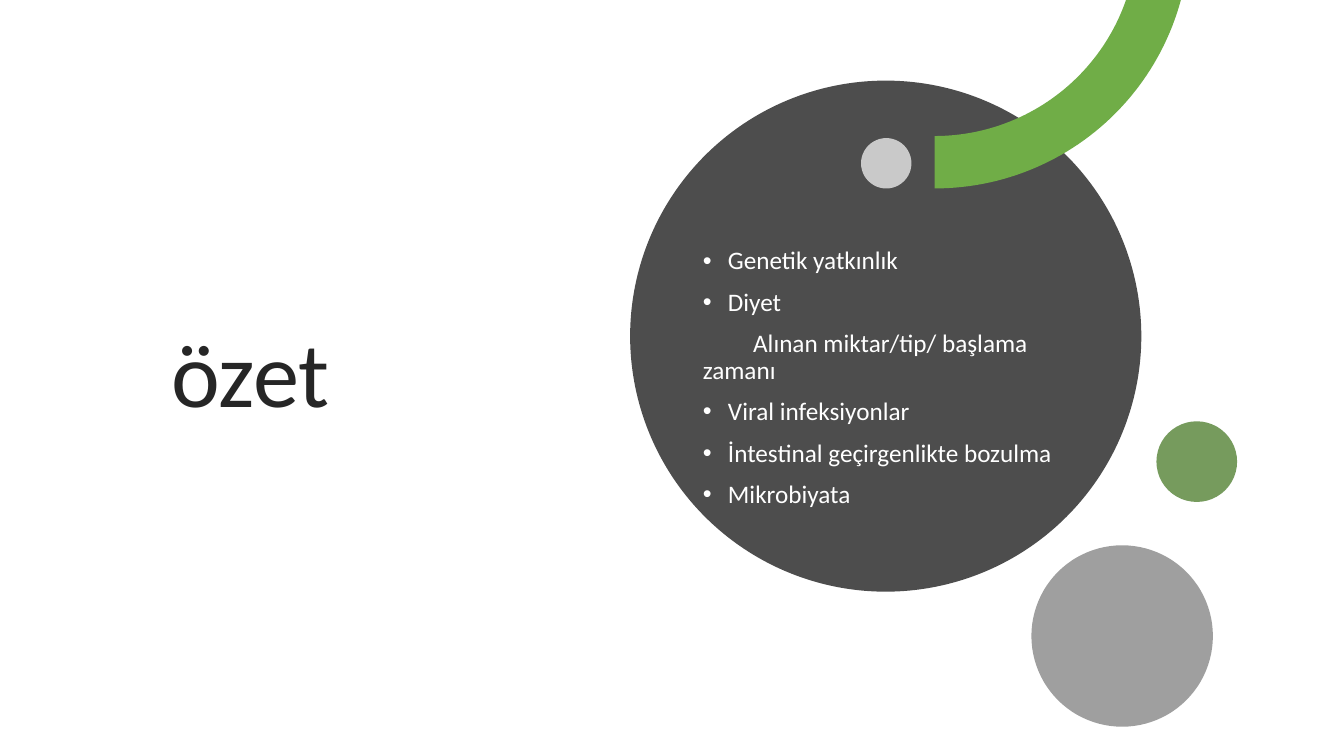
import math

from lxml import etree
from pptx import Presentation
from pptx.dml.color import RGBColor
from pptx.enum.shapes import MSO_SHAPE
from pptx.enum.text import MSO_ANCHOR, MSO_AUTO_SIZE, PP_ALIGN
from pptx.oxml.ns import qn
from pptx.util import Pt

OVAL = MSO_SHAPE.OVAL
MIDDLE = MSO_ANCHOR.MIDDLE
LEFT = PP_ALIGN.LEFT
NO_AUTOFIT = MSO_AUTO_SIZE.NONE

PX = 9144  # EMU, 100 px to the inch
SLIDE_SIZE = (1333, 750)
FONT = "Calibri"
COLORS = {
    "title": "262626",
    "body": "FFFFFF",
    "disc": "4D4D4D",
    "light": "FFFFFF",
    "arc": "70AD47",
    "green": "548235",
    "gray": "404040",
}

TITLE = "özet"
TITLE_BOX = (160, 119, 416, 511)
BODY_BOX = (687, 193, 392, 365)
# text, bulleted
BODY = [
    ("Genetik yatkınlık", True),
    ("Diyet", True),
    ("\tAlınan miktar/tip/ başlama zamanı", False),
    ("Viral infeksiyonlar", True),
    ("İntestinal geçirgenlikte bozulma", True),
    ("Mikrobiyata", True),
]
# left, top, diameter, color, opacity in percent
DISC = (625, 80, 507, "disc", 100)
HIGHLIGHT = (854, 137, 50, "light", 70)
CORNER_CIRCLES = [(1147, 418, 80, "green", 80), (1023, 541, 180, "gray", 50)]
ARC_CENTER = (927, -66)
ARC_RADII = (253, 201)
ARC_STEPS = 48
BULLET_INDENT = 25


def paint(shape, color, opacity=100):
    shape.shadow.inherit = False
    shape.fill.solid()
    shape.fill.fore_color.rgb = RGBColor.from_string(COLORS[color])
    shape.line.fill.background()
    if opacity < 100:
        color_element = shape._element.spPr.find(qn("a:solidFill"))[0]
        etree.SubElement(color_element, qn("a:alpha"), val=str(opacity * 1000))


def add_circle(slide, left, top, diameter, color, opacity):
    box = (left, top, diameter, diameter)
    circle = slide.shapes.add_shape(OVAL, *(value * PX for value in box))
    paint(circle, color, opacity)


def arc_points(radius):
    """Points from where the circle crosses the slide's top edge to its lowest point."""
    center_x, center_y = ARC_CENTER
    start = math.asin(-center_y / radius)
    step = (math.pi / 2 - start) / ARC_STEPS
    angles = [start + step * index for index in range(ARC_STEPS + 1)]
    return [
        (round((center_x + radius * math.cos(angle)) * PX),
         round((center_y + radius * math.sin(angle)) * PX))
        for angle in angles
    ]


def add_arc(slide):
    outer, inner = (arc_points(radius) for radius in ARC_RADII)
    points = outer + inner[::-1]
    builder = slide.shapes.build_freeform(*points[0])
    builder.add_line_segments(points[1:], close=True)
    paint(builder.convert_to_shape(), "arc")


def place(placeholder, box):
    placeholder.left, placeholder.top, placeholder.width, placeholder.height = (
        value * PX for value in box)
    frame = placeholder.text_frame
    frame.word_wrap = True
    frame.auto_size = NO_AUTOFIT
    frame.vertical_anchor = MIDDLE
    return frame


def write(paragraph, text, *, size, color, bullet=False, space_before=0):
    properties = paragraph._p.get_or_add_pPr()
    indent = BULLET_INDENT * PX if bullet else 0
    properties.set("marL", str(indent))
    properties.set("indent", str(-indent))
    if bullet:
        etree.SubElement(properties, qn("a:buFont"), typeface="Arial")
        etree.SubElement(properties, qn("a:buChar"), char="•")
    else:
        etree.SubElement(properties, qn("a:buNone"))
    paragraph.alignment = LEFT
    paragraph.line_spacing = 0.9
    paragraph.space_before = Pt(space_before)
    run = paragraph.add_run()
    run.text = text
    run.font.name = FONT
    run.font.size = Pt(size)
    run.font.color.rgb = RGBColor.from_string(COLORS[color])


def main():
    presentation = Presentation()
    presentation.slide_width, presentation.slide_height = (
        value * PX for value in SLIDE_SIZE)
    slide = presentation.slides.add_slide(presentation.slide_layouts[1])

    title_frame = place(slide.shapes.title, TITLE_BOX)
    write(title_frame.paragraphs[0], TITLE, size=66, color="title")

    add_circle(slide, *DISC)
    add_circle(slide, *HIGHLIGHT)
    add_arc(slide)
    for circle in CORNER_CIRCLES:
        add_circle(slide, *circle)

    body = slide.placeholders[1]
    slide.shapes._spTree.append(body._element)  # bring the list in front of the disc
    body_frame = place(body, BODY_BOX)
    for index, (text, bullet) in enumerate(BODY):
        paragraph = body_frame.add_paragraph() if index else body_frame.paragraphs[0]
        write(paragraph, text, size=18, color="body", bullet=bullet,
              space_before=10 if index else 0)

    presentation.save("out.pptx")


if __name__ == "__main__":
    main()
